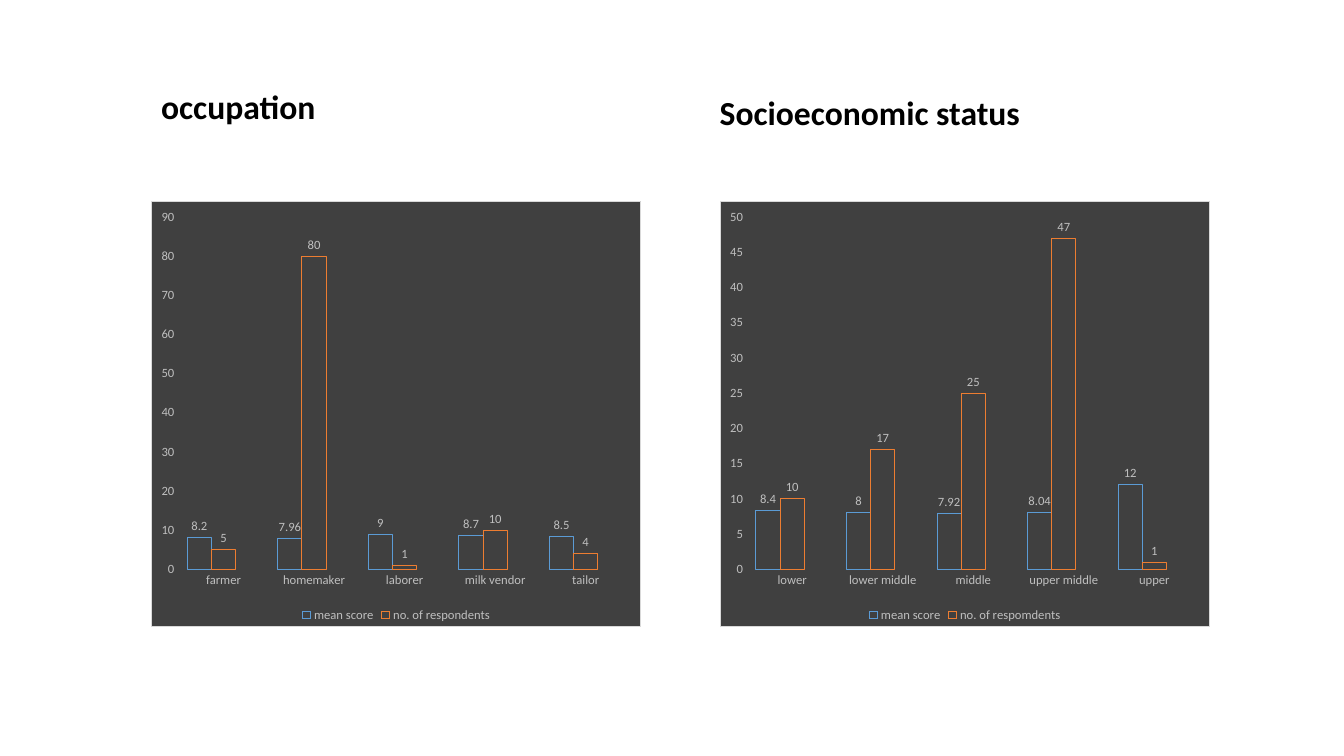
from lxml import etree
from pptx import Presentation
from pptx.chart.data import CategoryChartData
from pptx.dml.color import RGBColor
from pptx.enum.chart import XL_CHART_TYPE, XL_LABEL_POSITION, XL_LEGEND_POSITION, XL_TICK_MARK
from pptx.enum.text import MSO_ANCHOR
from pptx.oxml import parse_xml
from pptx.oxml.ns import nsdecls, qn
from pptx.util import Inches, Pt

COLUMNS = XL_CHART_TYPE.COLUMN_CLUSTERED
OUTSIDE_END = XL_LABEL_POSITION.OUTSIDE_END
BOTTOM_LEGEND = XL_LEGEND_POSITION.BOTTOM
NO_TICK = XL_TICK_MARK.NONE
ANCHOR_BOTTOM = MSO_ANCHOR.BOTTOM

# Content: the empty third series keeps its room in each group of columns
PANELS = [
    {
        "heading": "occupation",
        "heading_box": (1.5, 0.54, 4.86, 0.77),
        "chart_left": 1.5,
        "categories": ["farmer", "homemaker", "laborer", "milk vendor", "tailor"],
        "series": [
            ("mean score", [8.2, 7.96, 9, 8.7, 8.5]),
            ("no. of respondents", [5, 80, 1, 10, 4]),
            ("Series 3", [None] * 5),
        ],
        "axis_maximum": 90,
        "axis_step": 10,
    },
    {
        "heading": "Socioeconomic status",
        "heading_box": (7.04, 0.47, 4.86, 0.9),
        "chart_left": 7.14,
        "categories": ["lower", "lower middle", "middle", "upper middle", "upper"],
        "series": [
            ("mean score", [8.4, 8, 7.92, 8.04, 12]),
            ("no. of respomdents", [10, 17, 25, 47, 1]),
            ("Series 3", [None] * 5),
        ],
        "axis_maximum": 50,
        "axis_step": 5,
    },
]
CHART_TOP, CHART_WIDTH, CHART_HEIGHT = 1.99, 4.86, 4.23

THEME = {
    "font": "Calibri",
    "heading_size": 24,
    "chart_size": 9,
    "line_width": 0.75,
    "heading": "000000",
    "chart_text": "BFBFBF",
    "chart_fill": "404040",
    "chart_border": "D9D9D9",
    "series": ["5B9BD5", "ED7D31", "A5A5A5"],
}


def format_font(font, size, color, bold=False):
    font.name = THEME["font"]
    font.size = Pt(size)
    font.bold = bold
    font.color.rgb = RGBColor.from_string(color)


def add_text(slide, text, box, *, size, color, bold=False):
    shape = slide.shapes.add_textbox(*map(Inches, box))
    frame = shape.text_frame
    frame.word_wrap = True
    frame.vertical_anchor = ANCHOR_BOTTOM
    paragraph = frame.paragraphs[0]
    paragraph.line_spacing = 0.9
    paragraph.space_before = Pt(10)
    run = paragraph.add_run()
    run.text = text
    format_font(run.font, size, color, bold)


def fill_chart_area(chart):
    properties = parse_xml(
        f'<c:spPr {nsdecls("c", "a")}>'
        f'<a:solidFill><a:srgbClr val="{THEME["chart_fill"]}"/></a:solidFill>'
        f'<a:ln w="{Pt(THEME["line_width"])}"><a:solidFill>'
        f'<a:srgbClr val="{THEME["chart_border"]}"/></a:solidFill></a:ln></c:spPr>'
    )
    chart.element.find(qn("c:chart")).addnext(properties)


def hide_legend_entry(legend, index):
    entry = etree.Element(qn("c:legendEntry"))
    etree.SubElement(entry, qn("c:idx")).set("val", str(index))
    etree.SubElement(entry, qn("c:delete")).set("val", "1")
    legend._element.find(qn("c:legendPos")).addnext(entry)


def add_column_chart(slide, panel):
    data = CategoryChartData()
    data.categories = panel["categories"]
    for name, values in panel["series"]:
        data.add_series(name, values)
    box = (panel["chart_left"], CHART_TOP, CHART_WIDTH, CHART_HEIGHT)
    chart = slide.shapes.add_chart(COLUMNS, *map(Inches, box), data).chart
    chart.has_title = False
    format_font(chart.font, THEME["chart_size"], THEME["chart_text"])
    fill_chart_area(chart)

    # Axes
    for axis in (chart.category_axis, chart.value_axis):
        axis.has_major_gridlines = False
        axis.major_tick_mark = axis.minor_tick_mark = NO_TICK
        axis.format.line.fill.background()
        format_font(axis.tick_labels.font, THEME["chart_size"], THEME["chart_text"])
    chart.value_axis.minimum_scale = 0
    chart.value_axis.maximum_scale = panel["axis_maximum"]
    chart.value_axis.major_unit = panel["axis_step"]

    # Outlined columns with value labels
    plot = chart.plots[0]
    plot.gap_width = 75
    plot.overlap = 0
    plot.vary_by_categories = False
    for series, color in zip(plot.series, THEME["series"]):
        series.format.fill.background()
        series.format.line.color.rgb = RGBColor.from_string(color)
        series.format.line.width = Pt(THEME["line_width"])
        labels = series.data_labels
        labels.show_value = True
        labels.position = OUTSIDE_END
        format_font(labels.font, THEME["chart_size"], THEME["chart_text"])

    # Legend
    chart.has_legend = True
    chart.legend.position = BOTTOM_LEGEND
    chart.legend.include_in_layout = False
    format_font(chart.legend.font, THEME["chart_size"], THEME["chart_text"])
    hide_legend_entry(chart.legend, 2)


def main():
    presentation = Presentation()
    presentation.slide_width = Inches(13.33)
    presentation.slide_height = Inches(7.5)
    slide = presentation.slides.add_slide(presentation.slide_layouts[6])
    for panel in PANELS:
        add_text(slide, panel["heading"], panel["heading_box"],
                 size=THEME["heading_size"], color=THEME["heading"], bold=True)
        add_column_chart(slide, panel)
    presentation.save("out.pptx")


if __name__ == "__main__":
    main()
